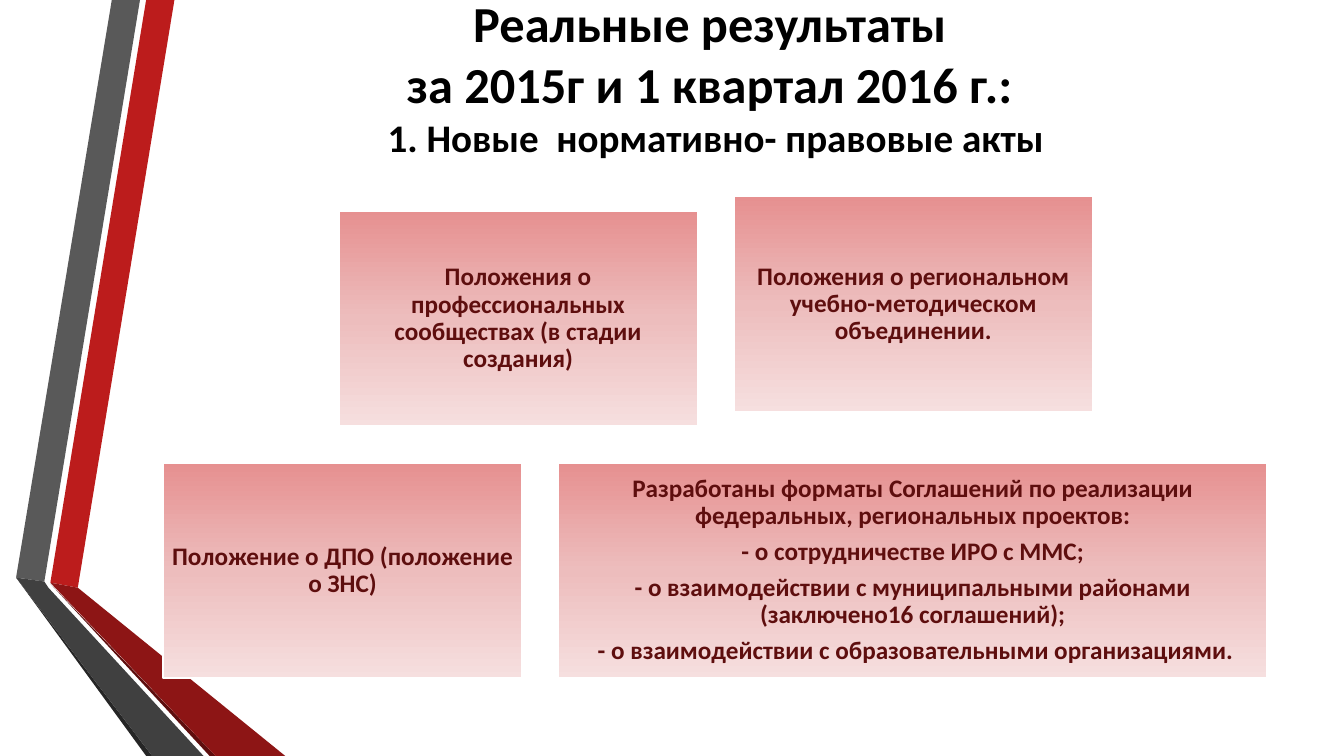
from copy import deepcopy
from dataclasses import dataclass

from pptx import Presentation
from pptx.dml.color import RGBColor
from pptx.enum.shapes import MSO_SHAPE
from pptx.enum.text import MSO_ANCHOR, MSO_AUTO_SIZE, PP_ALIGN
from pptx.oxml.ns import qn
from pptx.util import Pt


@dataclass(frozen=True)
class Theme:
    font: str = "Calibri"
    heading: str = "000000"
    card_text: str = "5E0E0E"
    card_line: str = "FFFFFF"
    card_gradient: tuple = ((0, "E69090"), (0.5, "EDBDBD"), (1, "F6DFDF"))
    red: str = "BC1C1C"
    red_fold: str = "8D1515"
    red_edge: str = "5E0E0E"
    gray: str = "595959"
    gray_fold: str = "404040"
    gray_edge: str = "262626"
    title_size: float = 36
    subtitle_size: float = 27.9
    card_size: float = 18


theme = Theme()


def style_font(font, size, color):
    font.name = theme.font
    font.size = Pt(size)
    font.bold = True
    font.color.rgb = RGBColor.from_string(color)


def fill_card(fill):
    """Apply the vertical gradient, adding the third stop to the default two."""
    fill.gradient()
    fill.gradient_angle = 270
    stop_list = card._element.spPr.find(qn("a:gradFill")).find(qn("a:gsLst"))
    stop_list.append(deepcopy(stop_list[0]))
    for stop, (position, color) in zip(fill.gradient_stops, theme.card_gradient):
        stop.position = position
        stop.color.rgb = RGBColor.from_string(color)


deck = Presentation()
deck.slide_width, deck.slide_height = Pt(960), Pt(540)
page = deck.slides.add_slide(deck.slide_layouts[5])

# Folded ribbons along the left edge
ribbons = [
    (theme.red, [(36, 416.2), (55.6, 419.8), (124.6, 0), (104.4, 0)]),
    (theme.gray, [(100, 0), (79.9, 0), (11.5, 412.6), (31.7, 415.4)]),
    (theme.gray_edge, [(11.5, 412.6), (104.4, 540), (108.7, 540)]),
    (theme.red_edge, [(36, 416.9), (149.8, 540), (154.1, 540)]),
    (theme.red_fold, [(36, 416.2), (154.1, 540), (203.8, 540), (55.6, 419.8)]),
    (theme.gray_fold, [(145.4, 540), (34.6, 419.8), (31.7, 415.4), (11.5, 412.6), (108.7, 540)]),
]
for color, points in ribbons:
    corners = [(Pt(x), Pt(y)) for x, y in points]
    builder = page.shapes.build_freeform(*corners[0], scale=1)
    builder.add_line_segments(corners[1:], close=True)
    ribbon = builder.convert_to_shape()
    ribbon.shadow.inherit = False
    ribbon.fill.solid()
    ribbon.fill.fore_color.rgb = RGBColor.from_string(color)
    ribbon.line.fill.background()

# Heading
title = page.shapes.title
title.left, title.top, title.width, title.height = Pt(116.6), Pt(23), Pt(789.1), Pt(97.2)
frame = title.text_frame
frame.auto_size = MSO_AUTO_SIZE.NONE
frame.word_wrap = True
frame.vertical_anchor = MSO_ANCHOR.MIDDLE
frame.margin_bottom = Pt(37.6)
para = frame.paragraphs[0]
para.alignment = PP_ALIGN.CENTER
heading_lines = [
    ("Реальные результаты ", theme.title_size),
    ("за 2015г и 1 квартал 2016 г.: ", theme.title_size),
    ("1. Новые  нормативно- правовые акты", theme.subtitle_size),
]
for index, (text, size) in enumerate(heading_lines):
    if index:
        para.add_line_break()
    span = para.add_run()
    span.text = text
    style_font(span.font, size, theme.heading)

# Cards: left, top, width, paragraphs
card_height = 154
narrow, wide = 256.3, 506.2
lower_row = 330.5
cards = [
    (241.9, 150.5, narrow, ["Положения о профессиональных сообществах (в стадии создания)"]),
    (524.2, 140.4, narrow, ["Положения о региональном учебно-методическом объединении."]),
    (116.6, lower_row, narrow, ["Положение о ДПО (положение о ЗНС)"]),
    (398.9, lower_row, wide, [
        "Разработаны форматы Соглашений по реализации федеральных, региональных проектов:",
        "- о сотрудничестве ИРО с ММС;",
        "- о взаимодействии с муниципальными районами (заключено16 соглашений);",
        " - о взаимодействии с образовательными организациями.",
    ]),
]
for left, top, width, texts in cards:
    card = page.shapes.add_shape(
        MSO_SHAPE.RECTANGLE, Pt(left), Pt(top), Pt(width), Pt(card_height))
    card.shadow.inherit = False
    fill_card(card.fill)
    card.line.color.rgb = RGBColor.from_string(theme.card_line)
    card.line.width = Pt(1.25)
    frame = card.text_frame
    frame.word_wrap = True
    frame.vertical_anchor = MSO_ANCHOR.MIDDLE
    frame.margin_left = frame.margin_right = Pt(5)
    frame.margin_top = frame.margin_bottom = Pt(5)
    for index, text in enumerate(texts):
        para = frame.add_paragraph() if index else frame.paragraphs[0]
        para.text = text
        para.alignment = PP_ALIGN.CENTER
        para.line_spacing = 0.9
        para.space_after = Pt(0.35 * theme.card_size)
        style_font(para.font, theme.card_size, theme.card_text)

deck.save("out.pptx")
